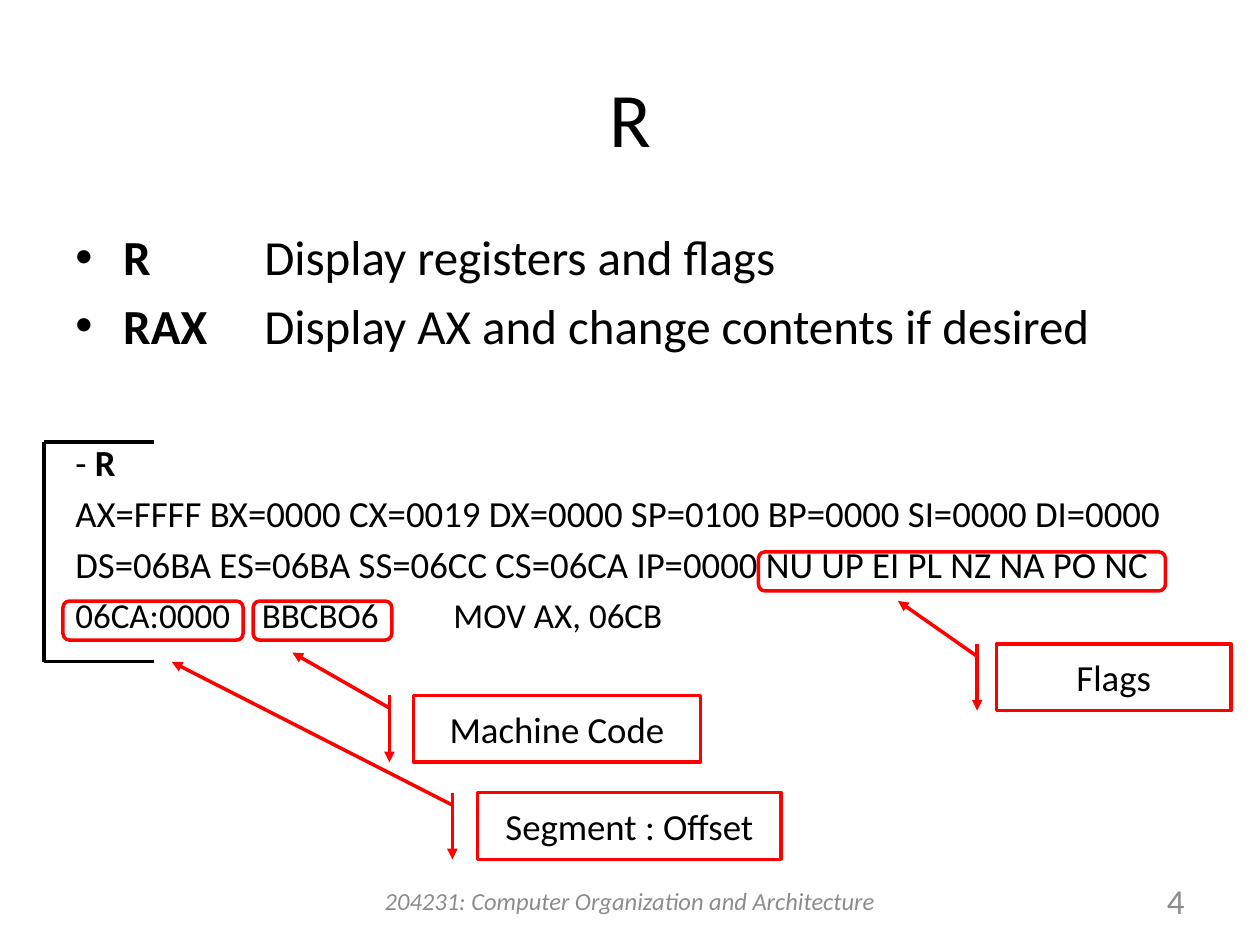
from lxml.etree import SubElement
from pptx import Presentation
from pptx.dml.color import RGBColor
from pptx.enum.shapes import MSO_CONNECTOR, MSO_SHAPE
from pptx.enum.text import MSO_ANCHOR, PP_ALIGN
from pptx.oxml.ns import qn
from pptx.util import Inches, Pt

BLACK = RGBColor(0x00, 0x00, 0x00)
GRAY = RGBColor(0x8C, 0x8C, 0x8C)
RED = RGBColor(0xFF, 0x00, 0x00)
FONT = "Calibri"


def write(para, text, size=21, color=BLACK, bold=False, italic=False,
          align=PP_ALIGN.LEFT, before=0):
    """Add one run to a paragraph."""
    para.alignment = align
    para.space_before = Pt(before)
    run = para.add_run()
    run.text = text
    font = run.font
    font.name, font.size = FONT, Pt(size)
    font.bold, font.italic = bold, italic
    font.color.rgb = color


def add_box(slide, x, y, w, h, anchor=MSO_ANCHOR.MIDDLE):
    box = slide.shapes.add_textbox(Inches(x), Inches(y), Inches(w), Inches(h))
    frame = box.text_frame
    frame.word_wrap = True
    frame.vertical_anchor = anchor
    return frame


def add_bullet(para):
    props = para._p.get_or_add_pPr()
    props.set("marL", str(Inches(0.38)))
    props.set("indent", str(-Inches(0.38)))
    SubElement(props, qn("a:buFont"), typeface="Arial")
    SubElement(props, qn("a:buChar"), char="•")


def add_tabs(para, *stops):
    tabs = SubElement(para._p.get_or_add_pPr(), qn("a:tabLst"))
    for stop in stops:
        SubElement(tabs, qn("a:tab"), pos=str(Inches(stop)), algn="l")


def add_line(slide, x1, y1, x2, y2):
    line = slide.shapes.add_connector(
        MSO_CONNECTOR.STRAIGHT, Inches(x1), Inches(y1), Inches(x2), Inches(y2))
    line.line.color.rgb = BLACK
    line.line.width = Pt(2.25)
    SubElement(line._element.spPr, qn("a:effectLst"))


def add_frame(slide, kind, x, y, w, h):
    """Add an unfilled shape with a red outline."""
    shape = slide.shapes.add_shape(
        kind, Inches(x), Inches(y), Inches(w), Inches(h))
    shape.fill.background()
    shape.line.color.rgb = RED
    shape.line.width = Pt(2)
    shape.shadow.inherit = False
    return shape


def add_label(slide, text, x, y, w, tip):
    """Add a callout whose arrow ends at tip, given as (down, across)."""
    kind = MSO_SHAPE.LINE_CALLOUT_1_BORDER_AND_ACCENT_BAR
    shape = add_frame(slide, kind, x, y, w, 0.53)
    for i, value in enumerate((0.188, -0.083, *tip)):
        shape.adjustments[i] = value
    SubElement(shape.line._get_or_add_ln(), qn("a:tailEnd"), type="triangle")
    frame = shape.text_frame
    frame.word_wrap = True
    frame.vertical_anchor = MSO_ANCHOR.MIDDLE
    write(frame.paragraphs[0], text, align=PP_ALIGN.CENTER)


def add_body(slide):
    frame = add_box(slide, 0.5, 1.75, 9, 4.95, MSO_ANCHOR.TOP)

    # Commands
    commands = [("R", "\t\tDisplay registers and flags"),
                ("RAX", "\tDisplay AX and change contents if desired")]
    for i, (name, use) in enumerate(commands):
        para = frame.add_paragraph() if i else frame.paragraphs[0]
        write(para, name, size=28, bold=True, before=5.6)
        write(para, use, size=28, before=5.6)
        add_bullet(para)

    # Sample session
    para = frame.add_paragraph()
    write(para, "- ", before=49)
    write(para, "R", bold=True, before=49)
    for text in (
            "AX=FFFF BX=0000 CX=0019 DX=0000 SP=0100 BP=0000 SI=0000 DI=0000",
            "DS=06BA ES=06BA SS=06CC CS=06CA IP=0000 NU UP EI PL NZ NA PO NC"):
        write(frame.add_paragraph(), text, before=4)
    para = frame.add_paragraph()
    write(para, "06CA:0000\tBBCBO6\tMOV AX, 06CB", size=20, before=4)
    add_tabs(para, 1.48, 3)


def main():
    deck = Presentation()
    deck.slide_width, deck.slide_height = Inches(10), Inches(7.5)
    slide = deck.slides.add_slide(deck.slide_layouts[6])

    # Title and body
    title = add_box(slide, 0.5, 0.3, 9, 1.25)
    write(title.paragraphs[0], "R", size=44, align=PP_ALIGN.CENTER)
    add_body(slide)

    # Footer and page number
    foot = add_box(slide, 0.51, 6.95, 8.98, 0.4)
    write(foot.paragraphs[0], "204231: Computer Organization and Architecture",
          size=14, color=GRAY, italic=True, align=PP_ALIGN.CENTER)
    page = add_box(slide, 7.17, 6.95, 2.33, 0.4)
    write(page.paragraphs[0], "4", size=20, color=GRAY, align=PP_ALIGN.RIGHT)

    # Bracket around the session
    left, right, top, base = 0.35, 1.22, 3.51, 5.25
    add_line(slide, left, top, left, base)
    for y in (top, base):
        add_line(slide, left, y, right, y)

    # Marked fields
    for x, y, w in ((0.5, 4.77, 1.43), (2.01, 4.77, 1.1), (6.02, 4.38, 3.23)):
        add_frame(slide, MSO_SHAPE.ROUNDED_RECTANGLE, x, y, w, 0.31)

    # Callouts
    near, far = (-0.643, -0.421), (-1.956, -1.007)
    add_label(slide, "Flags", 7.91, 5.11, 1.86, near)
    add_label(slide, "Machine Code", 3.28, 5.52, 2.28, near)
    add_label(slide, "Segment : Offset", 3.79, 6.29, 2.41, far)

    deck.save("out.pptx")


if __name__ == "__main__":
    main()
